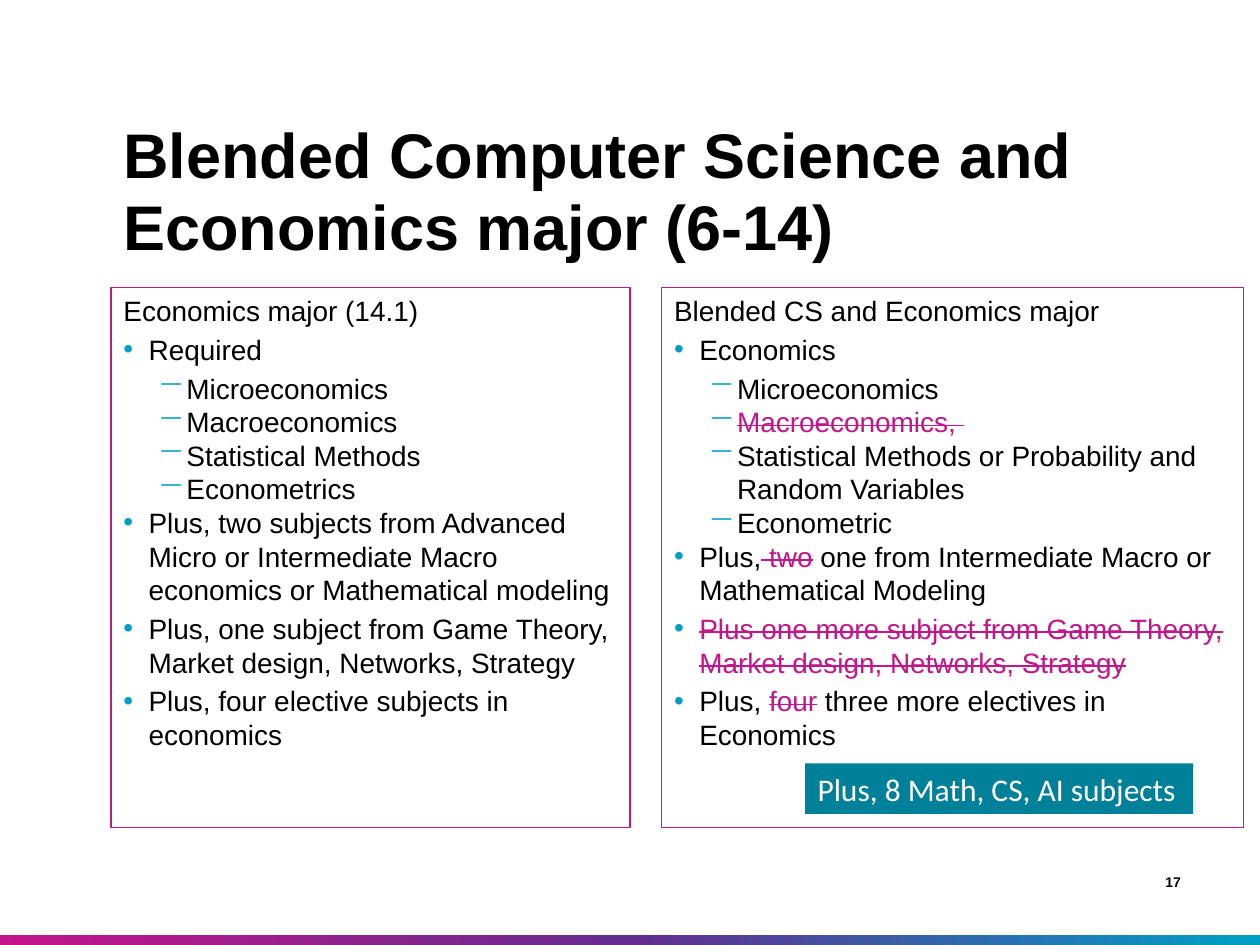
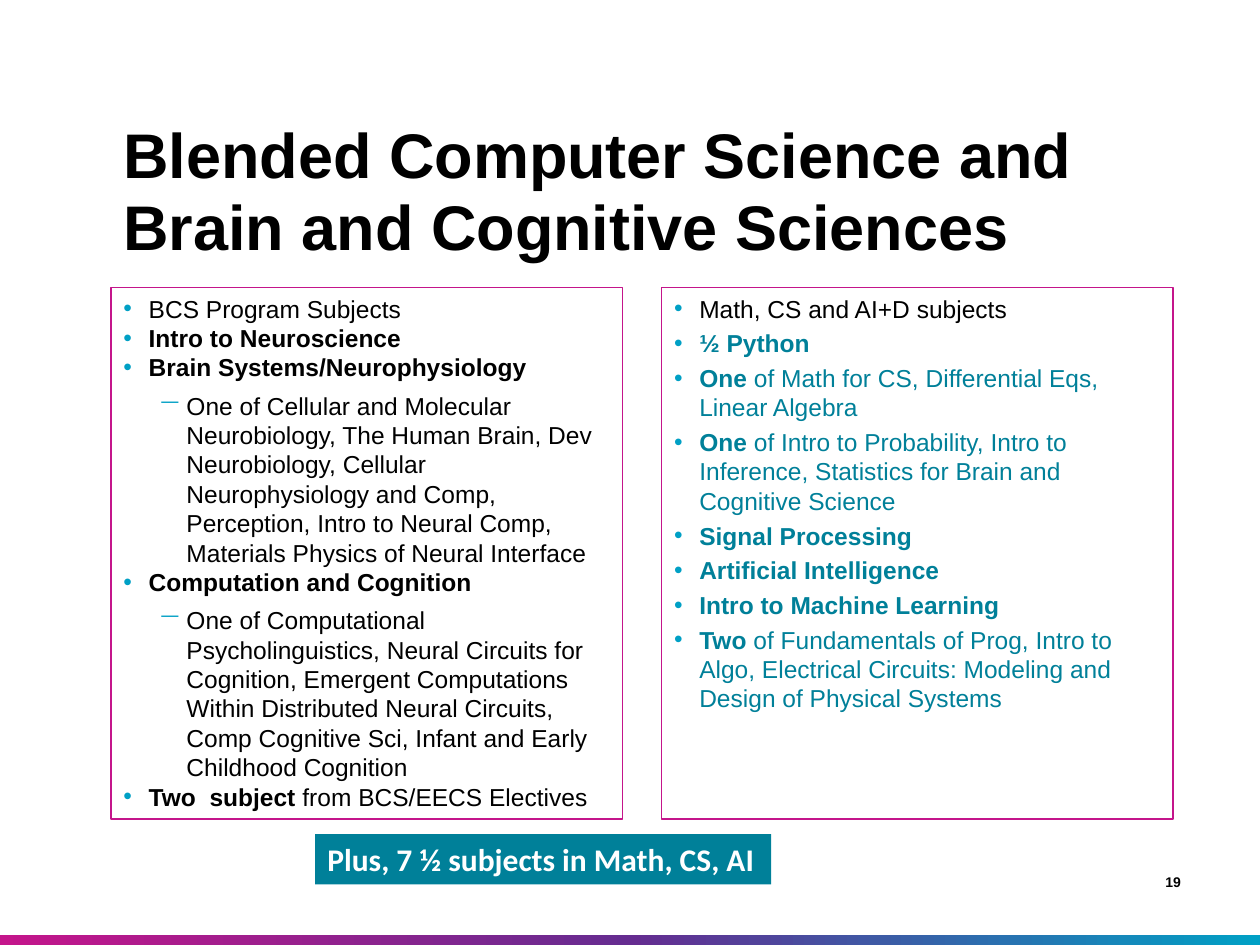
from copy import deepcopy
from dataclasses import dataclass
from lxml.etree import SubElement as Sub
from pptx import Presentation
from pptx.dml.color import RGBColor as Rgb
from pptx.enum.shapes import MSO_SHAPE as Shape
from pptx.enum.text import MSO_ANCHOR as Anchor, MSO_AUTO_SIZE as Fit, PP_ALIGN as Align
from pptx.oxml.ns import qn
from pptx.util import Inches, Pt

PINK = Rgb(0xC4, 0x15, 0x8B)
PLUM = Rgb(0x65, 0x2C, 0x90)
CYAN = Rgb(0x00, 0xA0, 0xC5)
TEAL = Rgb(0x00, 0x80, 0x99)
BLACK = Rgb(0, 0, 0)
WHITE = Rgb(255, 255, 255)
HEAD, DOT, DASH = range(3)
MARKS = {DOT: (0.2, "•", 100), DASH: (0.5, "⎻", 70)}


@dataclass
class Run:
    text: str
    bold: bool = False
    cut: bool = False


@dataclass
class Item:
    kind: int
    runs: list
    color: Rgb = BLACK


def line(kind, text, color=BLACK, **marks):
    return Item(kind, [Run(text, **marks)], color)


def pick(count, rest, color=BLACK):
    return Item(DOT, [Run(count, bold=True), Run(rest)], color)


class Deck:
    face = "Arial"

    def __init__(self):
        self.show = Presentation()
        self.show.slide_width = Inches(10)
        self.show.slide_height = Inches(7.5)

    def page(self, title, number):
        self.slide = self.show.slides.add_slide(self.show.slide_layouts[3])
        self.band()
        self.title(title)
        self.label(number, 8.72, 6.92, 0.75, 0.16, 8, bold=True, align=Align.RIGHT)

    def place(self, shape, left, top, width, height):
        shape.left, shape.top = Inches(left), Inches(top)
        shape.width, shape.height = Inches(width), Inches(height)

    def font(self, font, size, color, bold=False, face=None):
        font.name, font.size = face or self.face, Pt(size)
        font.color.rgb, font.bold = color, bold

    def band(self):
        bar = self.slide.shapes.add_shape(
            Shape.RECTANGLE, 0, Inches(7.42), Inches(10), Inches(0.08))
        bar.shadow.inherit = False
        bar.line.fill.background()
        bar.fill.gradient()
        bar.fill.gradient_angle = 0
        stops = bar._element.spPr.find(".//" + qn("a:gsLst"))
        stops.append(deepcopy(stops[0]))
        for stop, color, spot in zip(bar.fill.gradient_stops, (PINK, PLUM, CYAN), (0, 0.5, 1)):
            stop.color.rgb, stop.position = color, spot

    def title(self, text):
        shape = self.slide.shapes.title
        self.place(shape, 0.88, 0.93, 8.44, 1.22)
        frame = shape.text_frame
        frame.text = text
        frame.auto_size, frame.vertical_anchor = Fit.NONE, Anchor.BOTTOM
        para = frame.paragraphs[0]
        para.alignment, para.line_spacing = Align.LEFT, 0.95
        self.font(para.font, 36, BLACK, True)

    def bullet(self, para, kind):
        props = para._p.get_or_add_pPr()
        if kind == HEAD:
            props.set("marL", "0")
            props.set("indent", "0")
            Sub(props, qn("a:buNone"))
            return
        left, sign, size = MARKS[kind]
        props.set("marL", str(Inches(left)))
        props.set("indent", str(-Inches(0.2)))
        Sub(Sub(props, qn("a:buClr")), qn("a:srgbClr"), val=str(CYAN))
        Sub(props, qn("a:buSzPct"), val=str(size * 1000))
        Sub(props, qn("a:buChar"), char=sign)

    def panel(self, slot, left, width, height, size, items, after=3, lead=0):
        shape = self.slide.placeholders[slot]
        self.place(shape, left, 2.28, width, height)
        shape.line.color.rgb, shape.line.width = PINK, Pt(0.75)
        frame = shape.text_frame
        frame.auto_size, frame.vertical_anchor = Fit.NONE, Anchor.TOP
        for spot, item in enumerate(items):
            para = frame.add_paragraph() if spot else frame.paragraphs[0]
            nested = item.kind == DASH
            para.level = int(nested)
            para.space_before = Pt(lead if nested else 0)
            para.space_after = Pt(0 if nested else after)
            self.bullet(para, item.kind)
            self.font(para.font, size, item.color)
            for part in item.runs:
                run = para.add_run()
                run.text = part.text
                if part.bold:
                    run.font.bold = True
                if part.cut:
                    run.font.color.rgb = PINK
                    run._r.get_or_add_rPr().set("strike", "sngStrike")

    def label(self, text, left, top, width, height, size, color=BLACK,
              bold=False, align=Align.LEFT, face=None):
        box = self.slide.shapes.add_textbox(
            Inches(left), Inches(top), Inches(width), Inches(height))
        frame = box.text_frame
        frame.word_wrap, frame.vertical_anchor = True, Anchor.MIDDLE
        para = frame.paragraphs[0]
        para.text, para.alignment = text, align
        self.font(para.font, size, color, bold, face)
        return box

    def badge(self, text, left, top, width, bold=False):
        box = self.label(text, left, top, width, 0.4, 18, WHITE, bold, face="Calibri")
        box.fill.solid()
        box.fill.fore_color.rgb = TEAL
        box.text_frame.word_wrap = False
        box.text_frame.auto_size = Fit.SHAPE_TO_FIT_TEXT


def econ(deck):
    deck.page("Blended Computer Science and Economics major (6-14)", "17")
    topics = ["Microeconomics", "Macroeconomics", "Statistical Methods", "Econometrics"]
    deck.panel(1, 0.88, 4.12, 4.29, 16, [
        line(HEAD, "Economics major (14.1)"),
        line(DOT, "Required"),
        *[line(DASH, topic) for topic in topics],
        line(DOT, "Plus, two subjects from Advanced Micro or Intermediate Macro "
                  "economics or Mathematical modeling"),
        line(DOT, "Plus, one subject from Game Theory, Market design, Networks, Strategy"),
        line(DOT, "Plus, four elective subjects in economics"),
    ])
    deck.panel(2, 5.25, 4.62, 4.29, 16, [
        line(HEAD, "Blended CS and Economics major"),
        line(DOT, "Economics"),
        line(DASH, "Microeconomics"),
        line(DASH, "Macroeconomics, ", cut=True),
        line(DASH, "Statistical Methods or Probability and Random Variables"),
        line(DASH, "Econometric"),
        Item(DOT, [Run("Plus,"), Run(" two", cut=True),
                   Run(" one from Intermediate Macro or Mathematical Modeling")]),
        line(DOT, "Plus one more subject from Game Theory, Market design, "
                  "Networks, Strategy", cut=True),
        Item(DOT, [Run("Plus, "), Run("four", cut=True),
                   Run(" three more electives in Economics")]),
    ])
    deck.badge("Plus, 8 Math, CS, AI subjects", 6.39, 6.06, 3.08)


def brain(deck):
    deck.page("Blended Computer Science and Brain and Cognitive Sciences", "19")
    deck.panel(1, 0.88, 4.06, 4.22, 14, [
        line(DOT, "BCS Program Subjects"),
        line(DOT, "Intro to Neuroscience", bold=True),
        line(DOT, "Brain Systems/Neurophysiology", bold=True),
        line(DASH, "One of Cellular and Molecular Neurobiology, The Human Brain, "
                   "Dev Neurobiology, Cellular Neurophysiology and Comp, Perception, "
                   "Intro to Neural Comp, Materials Physics of Neural Interface"),
        line(DOT, "Computation and Cognition", bold=True),
        line(DASH, "One of Computational Psycholinguistics, Neural Circuits for "
                   "Cognition, Emergent Computations Within Distributed Neural "
                   "Circuits, Comp Cognitive Sci, Infant and Early Childhood Cognition"),
        pick("Two  subject ", "from BCS/EECS Electives"),
    ], after=0, lead=5)
    cores = ["Signal Processing", "Artificial Intelligence", "Intro to Machine Learning"]
    deck.panel(2, 5.25, 4.06, 4.22, 14, [
        line(DOT, "Math, CS and AI+D subjects"),
        line(DOT, "½ Python", TEAL, bold=True),
        pick("One ", "of Math for CS, Differential Eqs, Linear Algebra", TEAL),
        pick("One ", "of Intro to Probability, Intro to Inference, Statistics for "
                     "Brain and Cognitive Science", TEAL),
        *[line(DOT, core, TEAL, bold=True) for core in cores],
        pick("Two ", "of Fundamentals of Prog, Intro to Algo, Electrical Circuits: "
                     "Modeling and Design of Physical Systems", TEAL),
    ])
    deck.badge("Plus, 7 ½ subjects in Math, CS, AI", 2.5, 6.62, 3.62, bold=True)


def main():
    deck = Deck()
    econ(deck)
    brain(deck)
    deck.show.save("out.pptx")


if __name__ == "__main__":
    main()
